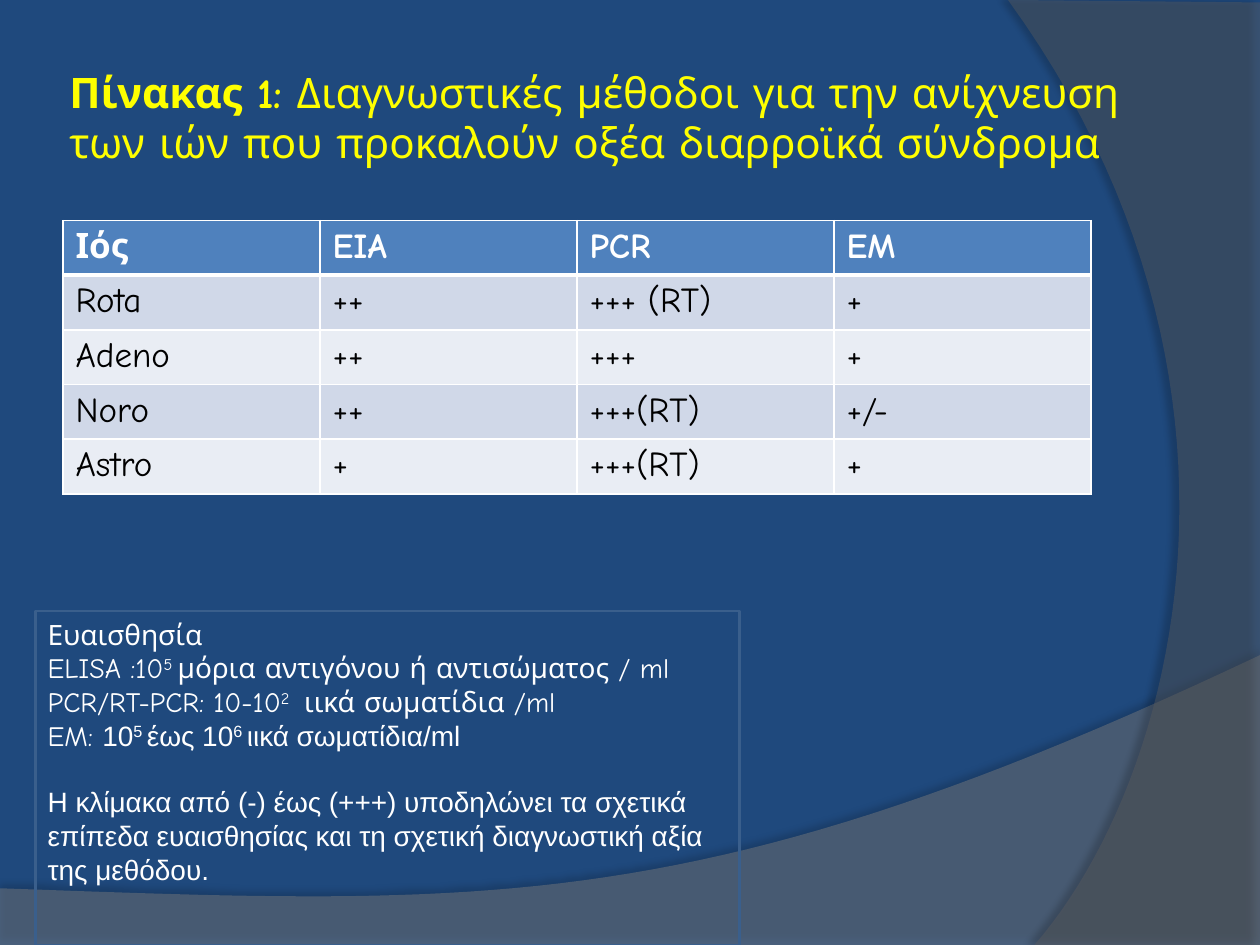
from dataclasses import dataclass

from lxml import etree
from pptx import Presentation
from pptx.dml.color import RGBColor
from pptx.enum.shapes import MSO_SHAPE
from pptx.enum.text import MSO_ANCHOR, PP_ALIGN
from pptx.oxml.ns import qn
from pptx.util import Inches, Pt

RECT = MSO_SHAPE.RECTANGLE
TOP, MIDDLE = MSO_ANCHOR.TOP, MSO_ANCHOR.MIDDLE
LEFT = PP_ALIGN.LEFT


@dataclass(frozen=True)
class Theme:
    background: str = "1F497D"
    title: str = "FFFF00"
    light: str = "FFFFFF"
    dark: str = "000000"
    header: str = "4F81BD"
    bands: tuple = ("D0D8E8", "E9EDF4")
    frame: str = "3A5F8C"
    wave: str = "7F7F7F"
    arc: str = "5E5E5E"
    shadow: str = "000000"
    font: str = "Comic Neue"
    plain_font: str = "Arial"
    title_size: int = 24
    table_size: int = 20
    note_size: int = 16


def rgb(value):
    return RGBColor.from_string(value)


def add_color(parent, color, alpha=100):
    clr = etree.SubElement(parent, qn("a:srgbClr"), val=color)
    etree.SubElement(clr, qn("a:alpha"), val=str(alpha * 1000))


def bezier(p0, p1, p2, p3, steps=48):
    points = []
    for i in range(1, steps + 1):
        t = i / steps
        u = 1 - t
        points.append(tuple(
            u**3 * a + 3 * u * u * t * b + 3 * u * t * t * c + t**3 * d
            for a, b, c, d in zip(p0, p1, p2, p3)))
    return points


class SlideBuilder:
    def __init__(self, prs, theme):
        self.theme = theme
        self.s = prs.slides.add_slide(prs.slide_layouts[6])
        fill = self.s.background.fill
        fill.solid()
        fill.fore_color.rgb = rgb(theme.background)

    def run(self, p, text, size, color, bold=False, font=None, raised=False):
        r = p.add_run()
        r.text = text
        r.font.size = Pt(size)
        r.font.name = font or self.theme.font
        r.font.bold = bold
        r.font.color.rgb = rgb(color)
        if raised:
            r.font._element.set("baseline", "30000")

    def swoosh(self, points, color, alpha, shadow_alpha, distance, angle):
        fb = self.s.shapes.build_freeform(
            Inches(points[0][0]), Inches(points[0][1]))
        fb.add_line_segments(
            [(Inches(x), Inches(y)) for x, y in points[1:]], close=True)
        sp = fb.convert_to_shape()
        sp.fill.solid()
        sp.fill.fore_color.rgb = rgb(color)
        clr = sp._element.spPr.find(qn("a:solidFill"))[0]
        etree.SubElement(clr, qn("a:alpha"), val=str(alpha * 1000))
        sp.line.fill.background()
        sp.shadow.inherit = False
        effects = sp._element.spPr.find(qn("a:effectLst"))
        shadow = etree.SubElement(
            effects, qn("a:outerShdw"), blurRad=str(Pt(4)),
            dist=str(Pt(distance)), dir=str(angle * 60000),
            algn="ctr", rotWithShape="0")
        add_color(shadow, self.theme.shadow, shadow_alpha)

    def title(self, x, y, w, h, lead, rest):
        tf = self.s.shapes.add_textbox(
            Inches(x), Inches(y), Inches(w), Inches(h)).text_frame
        tf.word_wrap = True
        tf.vertical_anchor = MIDDLE
        tf.margin_left = tf.margin_right = Inches(0.05)
        p = tf.paragraphs[0]
        t = self.theme
        self.run(p, lead, t.title_size, t.title, bold=True)
        self.run(p, rest, t.title_size, t.title)

    def borders(self, cell, bottom):
        tcPr = cell._tc.get_or_add_tcPr()
        for side, width in zip("LRTB", (1, 1, 1, bottom)):
            ln = etree.SubElement(tcPr, qn(f"a:ln{side}"), w=str(Pt(width)))
            fill = etree.SubElement(ln, qn("a:solidFill"))
            add_color(fill, self.theme.light)

    def table(self, x, y, col_width, row_height, rows):
        t = self.theme
        cols = len(rows[0])
        table = self.s.shapes.add_table(
            len(rows), cols, Inches(x), Inches(y),
            Inches(col_width * cols), Inches(row_height * len(rows))).table
        for i, values in enumerate(rows):
            is_header = i == 0
            for j, text in enumerate(values):
                cell = table.cell(i, j)
                self.borders(cell, 3 if is_header else 1)
                cell.fill.solid()
                cell.fill.fore_color.rgb = rgb(
                    t.header if is_header else t.bands[(i - 1) % 2])
                self.run(cell.text_frame.paragraphs[0], text, t.table_size,
                         t.light if is_header else t.dark, bold=is_header)
            if is_header:
                for j in range(cols):
                    below = table.cell(1, j)._tc.get_or_add_tcPr()
                    below.set("anchor", "t")

    def note(self, x, y, w, h, paragraphs, last_gap):
        t = self.theme
        sp = self.s.shapes.add_shape(
            RECT, Inches(x), Inches(y), Inches(w), Inches(h))
        sp.shadow.inherit = False
        sp.fill.background()
        sp.line.color.rgb = rgb(t.frame)
        sp.line.width = Pt(1.5)
        tf = sp.text_frame
        tf.word_wrap = True
        tf.vertical_anchor = TOP
        for i, runs in enumerate(paragraphs):
            p = tf.add_paragraph() if i else tf.paragraphs[0]
            p.alignment = LEFT
            for text, font, raised in runs:
                self.run(p, text, t.note_size, t.light, font=font, raised=raised)
        p.space_before = Pt(last_gap)


def main():
    prs = Presentation()
    prs.slide_width, prs.slide_height = Inches(10), Inches(7.5)
    theme = Theme()
    slide = SlideBuilder(prs, theme)

    wave = [(0, 7.05), (0, 7.5), (10, 7.5), (10, 5.2)]
    wave += bezier((10, 5.2), (5.59, 7.29), (3.91, 7.19), (0, 7.05))
    slide.swoosh(wave, theme.wave, 45, 35, 3.5, 270)
    arc = [(10, 0.02), (10, 7.5), (8.21, 7.5)]
    arc += bezier((8.21, 7.5), (9.35, 6.19), (10.18, 3), (8, 0))
    slide.swoosh(arc, theme.arc, 40, 45, 4, 180)

    slide.title(0.5, 0.3, 8.99, 1.25, "Πίνακας 1:",
                " Διαγνωστικές μέθοδοι για την ανίχνευση των ιών "
                "που προκαλούν οξέα διαρροϊκά σύνδρομα")
    slide.table(0.5, 1.75, 2.04, 0.42, [
        ("Ιός", "EIA", "PCR", "EM"),
        ("Rota", "++", "+++ (RT)", "+"),
        ("Adeno", "++", "+++", "+"),
        ("Noro", "++", "+++(RT)", "+/-"),
        ("Astro", "+", "+++(RT)", "+"),
    ])

    comic, arial = theme.font, theme.plain_font
    slide.note(0.28, 4.85, 5.59, 2.65, [
        [("Ευαισθησία", comic, False)],
        [("ELISA :10", comic, False), ("5 ", comic, True),
         ("μόρια αντιγόνου ή αντισώματος / ml", comic, False)],
        [("PCR/RT-PCR: 10-10", comic, False), ("2 ", comic, True),
         (" ιικά σωματίδια /ml", comic, False)],
        [("EM: ", comic, False), ("10", arial, False), ("5 ", arial, True),
         ("έως 10", arial, False), ("6 ", arial, True),
         ("ιικά σωματίδια/ml", arial, False)],
        [("Η κλίμακα από (-) έως (+++) υποδηλώνει τα σχετικά επίπεδα "
          "ευαισθησίας και τη σχετική διαγνωστική αξία της μεθόδου.",
          arial, False)],
    ], last_gap=19)

    prs.save("out.pptx")


if __name__ == "__main__":
    main()
